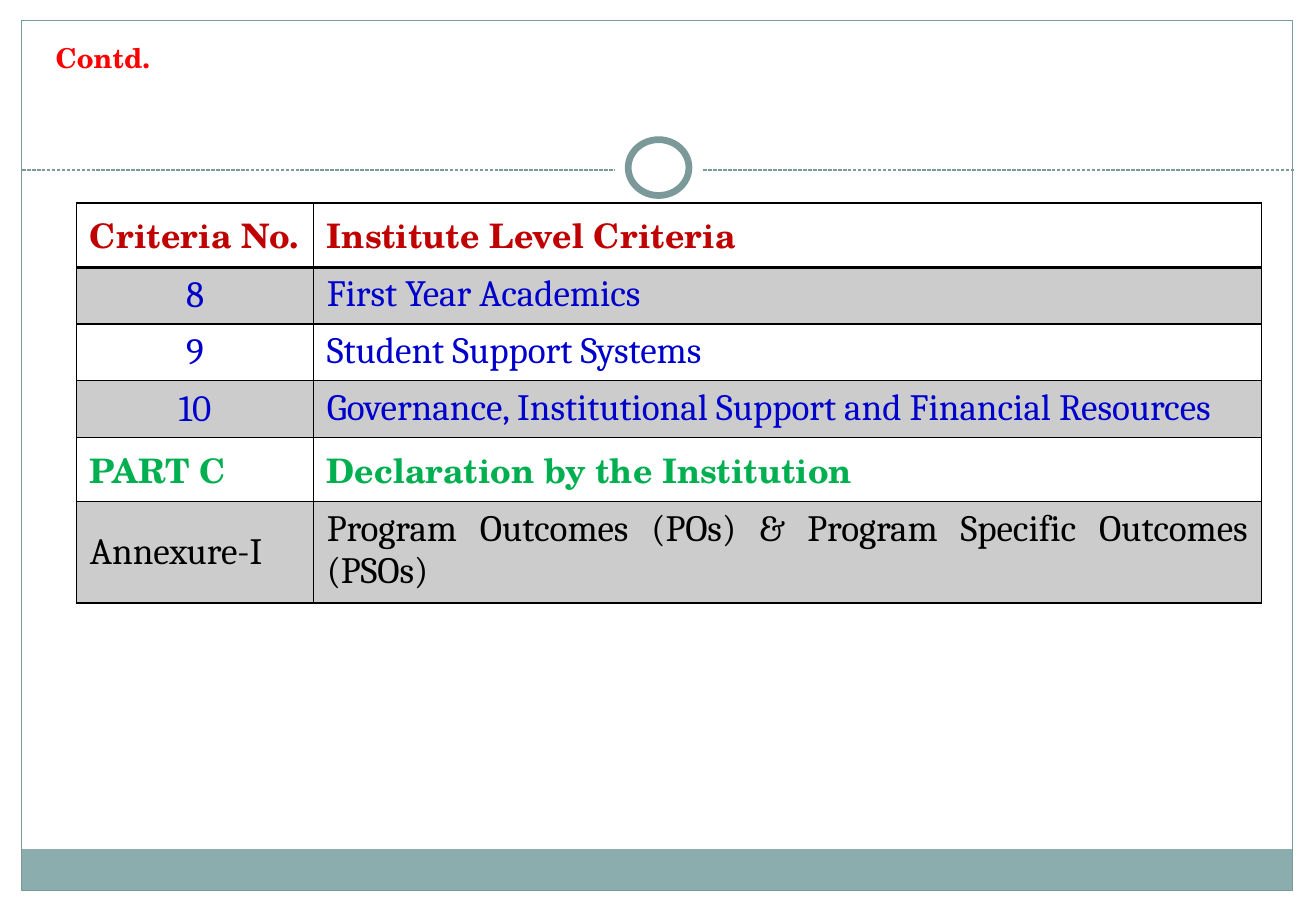
"""Build the accreditation criteria slide with its institute-level table."""
from lxml import etree
from pptx import Presentation
from pptx.dml.color import RGBColor
from pptx.enum.dml import MSO_LINE
from pptx.enum.shapes import MSO_CONNECTOR, MSO_SHAPE
from pptx.enum.text import MSO_ANCHOR, PP_ALIGN
from pptx.oxml import parse_xml
from pptx.oxml.ns import qn
from pptx.util import Inches, Pt

RECT, OVAL = MSO_SHAPE.RECTANGLE, MSO_SHAPE.OVAL
LEFT, CENTER, JUSTIFY = PP_ALIGN.LEFT, PP_ALIGN.CENTER, PP_ALIGN.JUSTIFY
TOP, MIDDLE, BOTTOM = MSO_ANCHOR.TOP, MSO_ANCHOR.MIDDLE, MSO_ANCHOR.BOTTOM
HEADING = ("TeX Gyre Schola", 20, True)
BODY = ("Cambria", 22, False)
A_NS = "http://schemas.openxmlformats.org/drawingml/2006/main"


def rgb(value):
    return RGBColor.from_string(value)


def style(p, text, font, color, align=LEFT):
    p.text = text
    p.alignment = align
    p.font.name, size, p.font.bold = font
    p.font.size = Pt(size)
    p.font.color.rgb = rgb(color)


prs = Presentation()
prs.slide_width, prs.slide_height = Inches(10.83), Inches(7.5)
s = prs.slides.add_slide(prs.slide_layouts[6])

line = s.shapes.add_connector(
    MSO_CONNECTOR.STRAIGHT, Inches(0.18), Inches(1.4), Inches(10.65), Inches(1.4))
line.line.color.rgb = rgb("7C999A")
line.line.width = Pt(0.75)
line.line.dash_style = MSO_LINE.SQUARE_DOT
etree.SubElement(line._element.spPr, qn("a:effectLst"))

frame_parts = [
    (RECT, 0.18, 6.99, 10.46, 0.34, "8CADAE", 0),
    (RECT, 0.18, 0.17, 10.46, 7.16, None, 0.75),
    (OVAL, 5.06, 1.05, 0.72, 0.67, "FFFFFF", 0),
    (OVAL, 5.17, 1.15, 0.5, 0.46, "FFFFFF", 4),
]
for kind, x, y, w, h, fill, width in frame_parts:
    sp = s.shapes.add_shape(kind, Inches(x), Inches(y), Inches(w), Inches(h))
    sp.shadow.inherit = False
    if fill:
        sp.fill.solid()
        sp.fill.fore_color.rgb = rgb(fill)
    else:
        sp.fill.background()
    if width:
        sp.line.color.rgb = rgb("7C999A")
        sp.line.width = Pt(width)
    else:
        sp.line.fill.background()

title = s.shapes.add_textbox(Inches(0.36), Inches(0.33), Inches(10.11), Inches(0.33))
tf = title.text_frame
tf.word_wrap = True
tf.vertical_anchor = BOTTOM
style(tf.paragraphs[0], "Contd.", ("TeX Gyre Schola", 16.2, True), "FF0000")

rows = [
    ("Criteria No.", "Institute Level Criteria", HEADING, "C00000", LEFT, LEFT, 0.53),
    ("8", "First Year Academics", BODY, "0000CC", CENTER, LEFT, 0.45),
    ("9", "Student Support Systems", BODY, "0000CC", CENTER, LEFT, 0.45),
    ("10", "Governance, Institutional Support and Financial Resources",
     BODY, "0000CC", CENTER, JUSTIFY, 0.45),
    ("PART C", "Declaration by the Institution", HEADING, "00B050", LEFT, LEFT, 0.53),
    ("Annexure-I", "Program Outcomes (POs) & Program Specific Outcomes (PSOs)",
     BODY, "000000", LEFT, JUSTIFY, 0.81),
]
table = s.shapes.add_table(
    len(rows), 2, Inches(0.63), Inches(1.67), Inches(9.75), Inches(3.22)).table
table.first_row = table.horz_banding = False
table.columns[0].width, table.columns[1].width = Inches(1.95), Inches(7.8)

for i, (number, criterion, font, color, align, text_align, height) in enumerate(rows):
    table.rows[i].height = Inches(height)
    for j, (text, al) in enumerate([(number, align), (criterion, text_align)]):
        cell = table.cell(i, j)
        cell.margin_left = cell.margin_right = Inches(0.11)
        cell.margin_top = cell.margin_bottom = Inches(0.05)
        cell.vertical_anchor = MIDDLE if j == 0 and font == BODY else TOP
        style(cell.text_frame.paragraphs[0], text, font, color, al)
        for side in "LRTB":
            thick = (i, side) in [(0, "B"), (1, "T")]
            cell._tc.get_or_add_tcPr().append(parse_xml(
                f'<a:ln{side} xmlns:a="{A_NS}" w="{Pt(2 if thick else 1)}"><a:solidFill>'
                f'<a:srgbClr val="000000"/></a:solidFill></a:ln{side}>'))
        if i % 2:
            cell.fill.solid()
            cell.fill.fore_color.rgb = rgb("CCCCCC")
        else:
            cell.fill.background()

prs.save("out.pptx")
